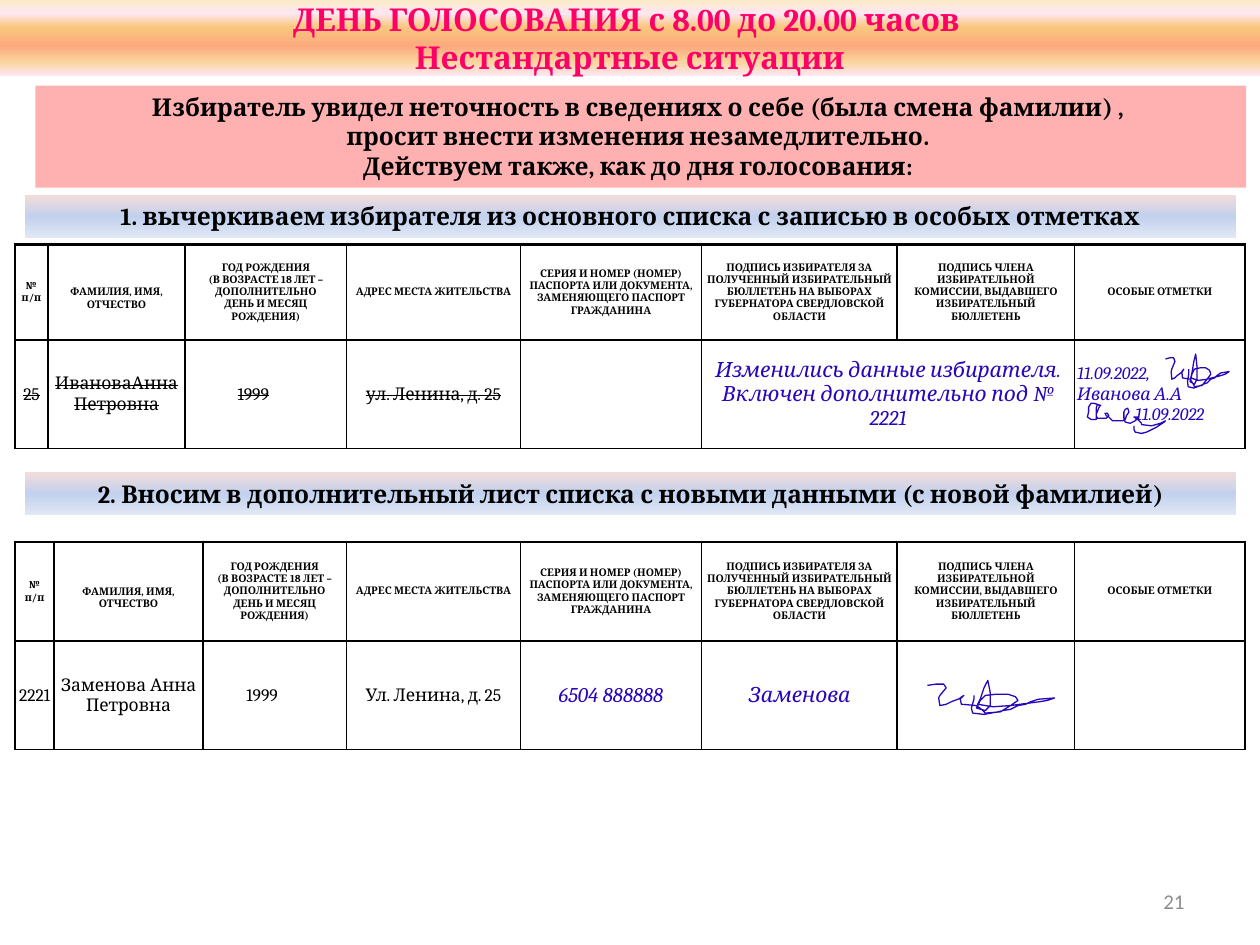
"""Build the slide on correcting voter data on election day."""
from lxml import etree
from pptx import Presentation
from pptx.dml.color import RGBColor
from pptx.enum.shapes import MSO_SHAPE
from pptx.enum.text import MSO_ANCHOR, PP_ALIGN
from pptx.oxml.ns import qn
from pptx.util import Inches, Pt

RECTANGLE = MSO_SHAPE.RECTANGLE
TOP, MIDDLE = MSO_ANCHOR.TOP, MSO_ANCHOR.MIDDLE
LEFT, CENTER, RIGHT = PP_ALIGN.LEFT, PP_ALIGN.CENTER, PP_ALIGN.RIGHT
BLACK = RGBColor(0x00, 0x00, 0x00)
PINK = RGBColor(0xFF, 0x00, 0x66)
RED = RGBColor(0xFF, 0x00, 0x00)
INK = RGBColor(0x29, 0x07, 0xB9)
GRAY = RGBColor(0x8C, 0x8C, 0x8C)

TITLE = "ДЕНЬ ГОЛОСОВАНИЯ с 8.00 до 20.00 часов \vНестандартные ситуации"
SITUATION = (
    "Избиратель увидел неточность в сведениях о себе (была смена фамилии) , \v"
    "просит внести изменения незамедлительно. \v"
    "Действуем также, как до дня голосования: "
)
STEPS = [
    ("1. вычеркиваем избирателя из основного списка с записью в особых отметках", 1.55),
    ("2. Вносим в дополнительный лист списка с новыми данными (с новой фамилией)", 3.75),
]
TITLE_GRADIENT = [(0, "FBEAC7"), (18, "FEE7F2"), (36, "FAC77D"),
                  (61, "FBA97D"), (82, "FBD49C"), (100, "FEE7F2")]
STEP_GRADIENT = [(0, "F2DCDB"), (50, "C2D1ED"), (100, "E1E8F5")]

HEADERS = [
    "№\nп/п",
    "ФАМИЛИЯ, ИМЯ, ОТЧЕСТВО",
    "ГОД РОЖДЕНИЯ\n(В ВОЗРАСТЕ 18 ЛЕТ –\nДОПОЛНИТЕЛЬНО\nДЕНЬ И МЕСЯЦ\nРОЖДЕНИЯ)",
    "АДРЕС МЕСТА ЖИТЕЛЬСТВА",
    "СЕРИЯ И НОМЕР (НОМЕР) ПАСПОРТА ИЛИ ДОКУМЕНТА, ЗАМЕНЯЮЩЕГО ПАСПОРТ ГРАЖДАНИНА",
    "ПОДПИСЬ ИЗБИРАТЕЛЯ ЗА ПОЛУЧЕННЫЙ ИЗБИРАТЕЛЬНЫЙ БЮЛЛЕТЕНЬ НА ВЫБОРАХ "
    "ГУБЕРНАТОРА СВЕРДЛОВСКОЙ ОБЛАСТИ",
    "ПОДПИСЬ ЧЛЕНА\nИЗБИРАТЕЛЬНОЙ\nКОМИССИИ, ВЫДАВШЕГО\nИЗБИРАТЕЛЬНЫЙ\nБЮЛЛЕТЕНЬ",
    "ОСОБЫЕ ОТМЕТКИ",
]
HEADER = dict(size=6, bold=True)
ENTRY = dict(size=10)
STRUCK = dict(size=10, strike=True)
HANDWRITTEN = dict(size=12, color=INK, italic=True)
MARK = dict(size=10, color=INK, italic=True, align=LEFT)
SHARED_WIDTHS = [1.38, 1.44, 1.55, 1.41, 1.35]
VOTER_LISTS = [
    dict(top=1.94, widths=[0.26, 1.09, 1.28], heights=[0.76, 0.86], merge=(5, 6), entries={
        0: ("25", STRUCK),
        1: ("ИвановаАнна Петровна", STRUCK),
        2: ("1999", STRUCK),
        3: ("ул. Ленина, д. 25", STRUCK),
        5: ("Изменились данные избирателя. Включен дополнительно под № 2221", HANDWRITTEN),
        7: ("11.09.2022, \vИванова А.А\n11.09.2022", MARK)}),
    dict(top=4.3, widths=[0.31, 1.18, 1.14], heights=[0.79, 0.86], merge=None, entries={
        0: ("2221", ENTRY),
        1: ("Заменова Анна Петровна", ENTRY),
        2: ("1999", ENTRY),
        3: ("Ул. Ленина, д. 25", ENTRY),
        4: ("6504 888888", HANDWRITTEN),
        5: ("Заменова", HANDWRITTEN)}),
]

OFFICIAL_SIGNATURE = [
    (0, 0.04), (0.07, 0.03), (0.13, 0.03), (0.15, 0.06), (0.1, 0.12), (0.09, 0.14), (0.1, 0.2),
    (0.15, 0.19), (0.19, 0.17), (0.27, 0.14), (0.29, 0.12), (0.26, 0.14), (0.27, 0.19),
    (0.39, 0.2), (0.43, 0.23), (0.46, 0.26), (0.58, 0.25), (0.66, 0.2), (0.72, 0.16),
    (0.7, 0.13), (0.64, 0.11), (0.55, 0.11), (0.46, 0.12), (0.42, 0.16), (0.39, 0.22),
    (0.46, 0.24), (0.5, 0.2), (0.5, 0.1), (0.48, 0), (0.45, 0.06), (0.42, 0.15), (0.4, 0.19),
    (0.52, 0.21), (0.66, 0.2), (0.89, 0.17), (0.95, 0.16), (1.01, 0.14), (0.88, 0.15),
    (0.82, 0.17), (0.78, 0.19), (0.72, 0.2), (0.66, 0.23), (0.6, 0.24), (0.56, 0.25),
    (0.45, 0.27), (0.36, 0.26), (0.35, 0.22), (0.37, 0.15), (0.37, 0.12),
]
VOTER_SIGNATURE = [
    (0.12, 0.02), (0.06, 0), (0.04, 0), (0.02, 0.03), (0.02, 0.07), (0.01, 0.11), (0.04, 0.13),
    (0.08, 0.13), (0.08, 0.09), (0.1, 0.04), (0.11, 0.02), (0.09, 0.01), (0.08, 0.04),
    (0.08, 0.1), (0.09, 0.12), (0.11, 0.12), (0.16, 0.12), (0.18, 0.1), (0.17, 0.08),
    (0.15, 0.08), (0.16, 0.1), (0.18, 0.11), (0.21, 0.14), (0.29, 0.14), (0.31, 0.13),
    (0.32, 0.1), (0.34, 0.07), (0.33, 0.04), (0.31, 0.05), (0.3, 0.07), (0.3, 0.12),
    (0.31, 0.15), (0.35, 0.16), (0.39, 0.14), (0.41, 0.12), (0.41, 0.11), (0.38, 0.11),
    (0.41, 0.13), (0.44, 0.16), (0.44, 0.17), (0.52, 0.18), (0.59, 0.16), (0.61, 0.15),
    (0.63, 0.14), (0.62, 0.15), (0.56, 0.19), (0.54, 0.2), (0.5, 0.22), (0.48, 0.23),
    (0.44, 0.24), (0.39, 0.23), (0.38, 0.21), (0.38, 0.18),
]
SIGNATURES = [
    (OFFICIAL_SIGNATURE, 9.25, 2.81, 0.5),
    (VOTER_SIGNATURE, 8.62, 3.2, 1),
    (OFFICIAL_SIGNATURE, 7.36, 5.4, 1),
]


def write_text(frame, text, size=14, color=BLACK, font="Cambria", bold=False,
               italic=False, strike=False, align=CENTER):
    frame.word_wrap = True
    for index, line in enumerate(text.split("\n")):
        paragraph = frame.add_paragraph() if index else frame.paragraphs[0]
        paragraph.text = line
        paragraph.alignment = align
        for run in paragraph.runs:
            run.font.name, run.font.size = font, Pt(size)
            run.font.bold, run.font.italic = bold, italic
            run.font.color.rgb = color
            if strike:
                run.font._element.set("strike", "sngStrike")


def add_band(slide, text, left, top, width, height, anchor=TOP, **text_format):
    shape = slide.shapes.add_shape(
        RECTANGLE, Inches(left), Inches(top), Inches(width), Inches(height))
    shape.shadow.inherit = False
    shape.line.fill.background()
    shape.text_frame.vertical_anchor = anchor
    write_text(shape.text_frame, text, bold=True, **text_format)
    return shape


def set_gradient(shape, stops):
    shape.fill.gradient()
    shape.fill.gradient_angle = 270
    stop_list = shape._element.spPr.find(qn("a:gradFill")).find(qn("a:gsLst"))
    for stop in list(stop_list):
        stop_list.remove(stop)
    for position, color in stops:
        stop = etree.SubElement(stop_list, qn("a:gs"), pos=str(position * 1000))
        etree.SubElement(stop, qn("a:srgbClr"), val=color)


def set_borders(cell, widths):
    properties = cell._tc.get_or_add_tcPr()
    for index, (side, width) in enumerate(widths.items()):
        line = etree.Element(qn(f"a:ln{side}"), w=str(Pt(width)))
        fill = etree.SubElement(line, qn("a:solidFill"))
        etree.SubElement(fill, qn("a:srgbClr"), val=str(BLACK))
        properties.insert(index, line)


def add_voter_list(slide, top, widths, heights, merge, entries):
    widths = widths + SHARED_WIDTHS
    last = len(widths) - 1
    table = slide.shapes.add_table(
        2, len(widths), Inches(0.12), Inches(top), Inches(sum(widths)), Inches(sum(heights))).table
    table.first_row = table.horz_banding = False
    for column, width in zip(table.columns, widths):
        column.width = Inches(width)
    for row, height in zip(table.rows, heights):
        row.height = Inches(height)
    contents = [{index: (text, HEADER) for index, text in enumerate(HEADERS)}, entries]
    for row, content in enumerate(contents):
        for column in range(len(widths)):
            cell = table.cell(row, column)
            cell.margin_left = cell.margin_right = Inches(0.02)
            cell.margin_top = cell.margin_bottom = 0
            cell.vertical_anchor = MIDDLE
            cell.fill.background()
            set_borders(cell, {"L": 1 if column else 1.5, "R": 1.5 if column == last else 1,
                               "T": 1.5, "B": 1 if row else 1.5})
            if column in content:
                text, text_format = content[column]
                write_text(cell.text_frame, text, **text_format)
    table.cell(0, 1).margin_top = Inches(0.1)
    table.cell(1, 2).margin_right = Inches(0.22)
    if merge:
        first, final = merge
        table.cell(1, first).merge(table.cell(1, final))
    for paragraph in table.cell(1, last).text_frame.paragraphs[1:]:
        paragraph._p.get_or_add_pPr().set("marL", str(Inches(0.46)))


def add_signature(slide, points, left, top, stretch):
    trace = [(Inches(left + x * stretch), Inches(top + y)) for x, y in points]
    builder = slide.shapes.build_freeform(*trace[0])
    builder.add_line_segments(trace[1:], close=False)
    shape = builder.convert_to_shape()
    shape.shadow.inherit = False
    shape.fill.background()
    shape.line.color.rgb = INK
    shape.line.width = Pt(0.75)


def main():
    presentation = Presentation()
    presentation.slide_width, presentation.slide_height = Inches(10), Inches(7.5)
    slide = presentation.slides.add_slide(presentation.slide_layouts[6])

    title = add_band(slide, TITLE, 0, 0, 10, 0.6, anchor=MIDDLE, size=18, color=PINK)
    set_gradient(title, TITLE_GRADIENT)
    number = slide.shapes.add_textbox(Inches(7.17), Inches(6.95), Inches(2.33), Inches(0.4))
    number.text_frame.vertical_anchor = MIDDLE
    write_text(number.text_frame, "21", size=12, font="Calibri", color=GRAY, align=RIGHT)

    for voter_list in VOTER_LISTS:
        add_voter_list(slide, **voter_list)
    for signature in SIGNATURES:
        add_signature(slide, *signature)

    situation = add_band(slide, SITUATION, 0.28, 0.68, 9.61, 0.81)
    situation.fill.solid()
    situation.fill.fore_color.rgb = RED
    color = situation._element.spPr.find(qn("a:solidFill")).find(qn("a:srgbClr"))
    etree.SubElement(color, qn("a:alpha"), val="31000")
    for text, top in STEPS:
        set_gradient(add_band(slide, text, 0.2, top, 9.61, 0.34), STEP_GRADIENT)

    presentation.save("out.pptx")


if __name__ == "__main__":
    main()
